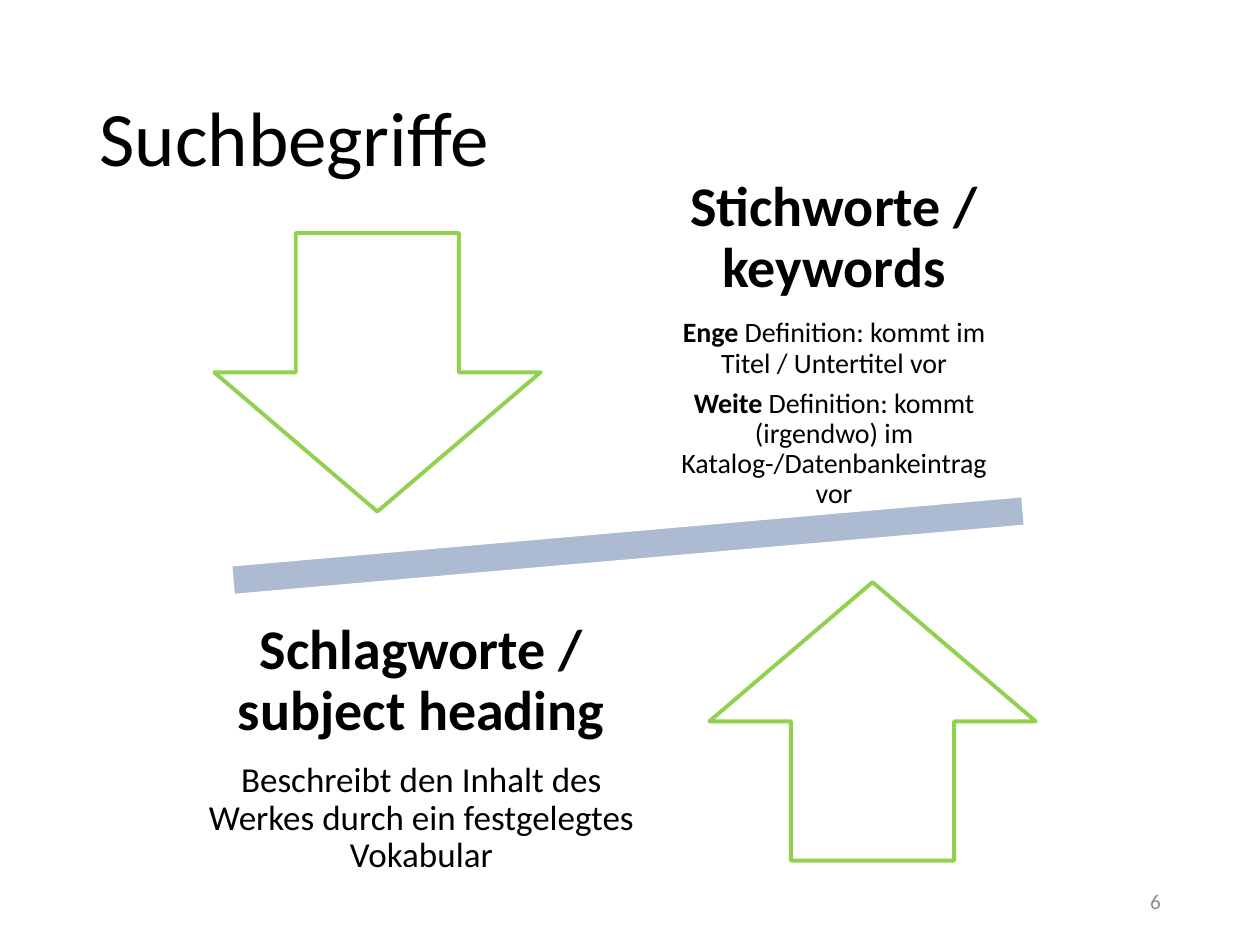
import pptx
import pptx.dml.color
import pptx.enum.shapes
import pptx.enum.text
import pptx.util

Inches = pptx.util.Inches
Pt = pptx.util.Pt
ALIGN = pptx.enum.text.PP_ALIGN
SHAPE = pptx.enum.shapes.MSO_SHAPE

COLORS = {
    "text": "000000",
    "number": "8C8C8C",
    "paper": "FFFFFF",
    "beam": "ACBBD1",
    "arrow": "92D050",
}


def rgb(name):
    return pptx.dml.color.RGBColor.from_string(COLORS[name])


def add_text(box, paragraphs, align, color="text", inset=None, spacing=None, after=0):
    """Add a text box; paragraphs are (size, [(text, bold), ...]), after is a share of the size."""
    frame = slide.shapes.add_textbox(*map(Inches, box)).text_frame
    frame.word_wrap = True
    frame.vertical_anchor = pptx.enum.text.MSO_ANCHOR.MIDDLE
    if inset is not None:
        frame.margin_left = frame.margin_right = Inches(inset)
        frame.margin_top = frame.margin_bottom = Inches(inset)
    for index, (size, runs) in enumerate(paragraphs):
        paragraph = frame.add_paragraph() if index else frame.paragraphs[0]
        paragraph.alignment = align
        paragraph.line_spacing = spacing
        paragraph.space_after = Pt(round(size * after, 1))
        for text, bold in runs:
            run = paragraph.add_run()
            run.text = text
            run.font.name = "Calibri"
            run.font.size = Pt(size)
            run.font.bold = bold
            run.font.color.rgb = rgb(color)


presentation = pptx.Presentation()
presentation.slide_width = Inches(10)
presentation.slide_height = Inches(7.5)
slide = presentation.slides.add_slide(presentation.slide_layouts[6])

add_text((0.69, 0.4, 8.62, 1.45), [(44, [("Suchbegriffe", False)])], ALIGN.LEFT, spacing=0.9)
add_text((7.06, 6.95, 2.25, 0.4), [(12, [("6", False)])], ALIGN.RIGHT, color="number")

# Tilted beam with an arrow on either side
balance = [
    (SHAPE.MATH_MINUS, (0.7, 3.84, 8.57, 0.98), 355, "beam", "paper", 1),
    (SHAPE.DOWN_ARROW, (1.7, 1.85, 2.59, 2.21), 0, "paper", "arrow", 2.25),
    (SHAPE.UP_ARROW, (5.63, 4.62, 2.59, 2.21), 0, "paper", "arrow", 2.25),
]
for preset, box, rotation, fill, line, width in balance:
    part = slide.shapes.add_shape(preset, *map(Inches, box))
    part.rotation = rotation
    part.shadow.inherit = False
    part.fill.solid()
    part.fill.fore_color.rgb = rgb(fill)
    part.line.color.rgb = rgb(line)
    part.line.width = Pt(width)

terms = [
    ((5.03, 1.57, 3.18, 2.32), [
        (32, [("Stichworte / keywords", True)]),
        (16, [("Enge", True), (" Definition: kommt im Titel / Untertitel vor", False)]),
        (16, [("Weite", True),
              (" Definition: kommt (irgendwo) im Katalog-/Datenbankeintrag vor", False)]),
    ]),
    ((1.38, 4.78, 3.93, 2.32), [
        (32, [("Schlagworte / subject heading", True)]),
        (20, [("Beschreibt den Inhalt des Werkes durch ein festgelegtes Vokabular", False)]),
    ]),
]
for box, paragraphs in terms:
    add_text(box, paragraphs, ALIGN.CENTER, inset=0.25, spacing=0.9, after=0.35)

presentation.save("out.pptx")
